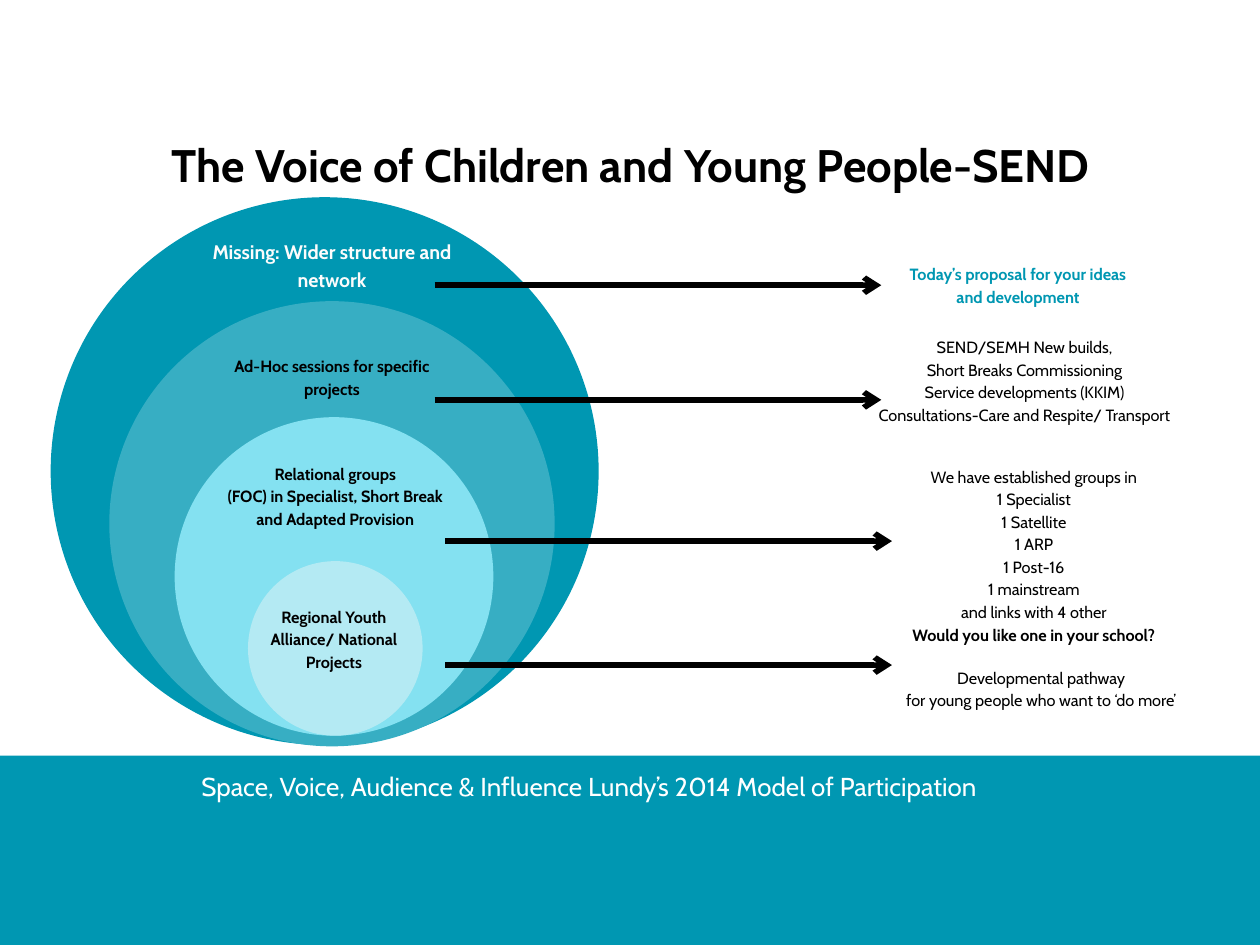
from lxml import etree
from pptx import Presentation
from pptx.dml.color import RGBColor
from pptx.enum.shapes import MSO_CONNECTOR as CONNECTOR, MSO_SHAPE as SHAPE
from pptx.enum.text import MSO_ANCHOR as ANCHOR, MSO_AUTO_SIZE as AUTO_SIZE, PP_ALIGN as ALIGN
from pptx.oxml.ns import qn
from pptx.util import Inches, Pt

WIDTH, HEIGHT = 9.45, 7.09
FONT = "Cabin"
TEAL, BLACK, WHITE = "0097B2", "000000", "FFFFFF"
ARROW_LENGTH = 3.35

# left, top, diameter, colour: from the outer circle to the inner one
CIRCLES = [
    (0.38, 1.48, 4.11, TEAL),
    (0.82, 2.26, 3.34, "37AEC3"),
    (1.31, 3.13, 2.39, "84E1F1"),
    (1.86, 4.21, 1.31, "B4EAF3"),
]

# left, top, width, height, lines
CIRCLE_LABELS = [
    (1.64, 2.65, 1.7, 0.33, ["Ad-Hoc sessions for specific", "projects"]),
    (1.59, 3.46, 1.85, 0.66, ["Relational groups", "(FOC) in Specialist, Short Break",
                              "and Adapted Provision"]),
    (1.98, 4.53, 1.05, 0.66, ["Regional Youth Alliance/ National", "Projects"]),
]
NOTES = [
    (6.43, 2.51, 2.51, 0.66, ["SEND/SEMH New builds,", "Short Breaks Commissioning",
                              "Service developments (KKIM)",
                              "Consultations-Care and Respite/ Transport"]),
    (6.64, 3.48, 2.23, 1.37, ["We have established groups in", "1 Specialist", "1 Satellite",
                              "1 ARP", "1 Post-16", "1 mainstream", "and links with 4 other",
                              "Would you like one in your school?"]),
    (6.63, 4.99, 2.36, 0.33, ["Developmental pathway",
                              "for young people who want to ‘do more’"]),
]

# left, top of each arrow
ARROWS = [(3.26, 2.14), (3.26, 3), (3.34, 4.06), (3.34, 4.99)]


def colour(value):
    return RGBColor.from_string(value)


def write_text(shape, lines, size=8.8, spacing=12.2, fill=BLACK, bold=False, align=ALIGN.CENTER):
    frame = shape.text_frame
    frame.text = "\n".join(lines)
    frame.word_wrap = True
    frame.auto_size = AUTO_SIZE.NONE
    frame.vertical_anchor = ANCHOR.TOP
    frame.margin_left = frame.margin_right = frame.margin_top = frame.margin_bottom = 0
    for paragraph in frame.paragraphs:
        paragraph.alignment = align
        paragraph.line_spacing = Pt(spacing)
        paragraph.space_before = Pt(0)
        for run in paragraph.runs:
            run.font.name = FONT
            run.font.size = Pt(size)
            run.font.bold = bold
            run.font.color.rgb = colour(fill)


def add_title(slide, text):
    title = slide.shapes.title
    title.left, title.top = Inches(0.86), Inches(0.96)
    title.width, title.height = Inches(7.74), Inches(0.46)
    write_text(title, [text], size=24.6, spacing=34.4, bold=True)


def add_label(slide, left, top, width, height, lines, **style):
    box = slide.shapes.add_textbox(Inches(left), Inches(top), Inches(width), Inches(height))
    write_text(box, lines, **style)
    return box


def add_filled(slide, kind, left, top, width, height, fill):
    shape = slide.shapes.add_shape(kind, Inches(left), Inches(top), Inches(width), Inches(height))
    shape.shadow.inherit = False
    shape.fill.solid()
    shape.fill.fore_color.rgb = colour(fill)
    shape.line.fill.background()


def add_arrow(slide, left, top):
    arrow = slide.shapes.add_connector(CONNECTOR.STRAIGHT, Inches(left), Inches(top),
                                       Inches(left + ARROW_LENGTH), Inches(top))
    arrow.line.color.rgb = colour(BLACK)
    arrow.line.width = Pt(3)
    etree.SubElement(arrow.line._get_or_add_ln(), qn("a:tailEnd"), type="arrow")
    etree.SubElement(arrow._element.spPr, qn("a:effectLst"))


def main():
    presentation = Presentation()
    presentation.slide_width, presentation.slide_height = Inches(WIDTH), Inches(HEIGHT)
    slide = presentation.slides.add_slide(presentation.slide_layouts[5])
    add_title(slide, "The Voice of Children and Young People-SEND")

    # Footer band
    add_filled(slide, SHAPE.RECTANGLE, 0, 5.67, WIDTH, HEIGHT - 5.67, TEAL)
    add_label(slide, 1.51, 5.74, 6.78, 0.26,
              ["Space, Voice, Audience & Influence Lundy’s 2014 Model of Participation"],
              size=14, spacing=19.7, fill=WHITE, align=ALIGN.LEFT)

    # Nested circles and their labels
    for left, top, diameter, fill in CIRCLES:
        add_filled(slide, SHAPE.OVAL, left, top, diameter, diameter, fill)
    add_label(slide, 1.44, 1.77, 2.1, 0.4, ["Missing: Wider structure and", "network"],
              size=10.6, spacing=14.9, fill="FCFCFC", bold=True)
    for label in CIRCLE_LABELS:
        add_label(slide, *label, bold=True)

    # Arrows to the notes
    for left, top in ARROWS:
        add_arrow(slide, left, top)

    # Notes on the right
    add_label(slide, 6.69, 1.96, 1.89, 0.33, ["Today’s proposal for your ideas", "and development"],
              fill=TEAL, bold=True)
    developments, groups, pathway = [add_label(slide, *note) for note in NOTES]
    groups.text_frame.paragraphs[-1].runs[0].font.bold = True

    presentation.save("out.pptx")


if __name__ == "__main__":
    main()
